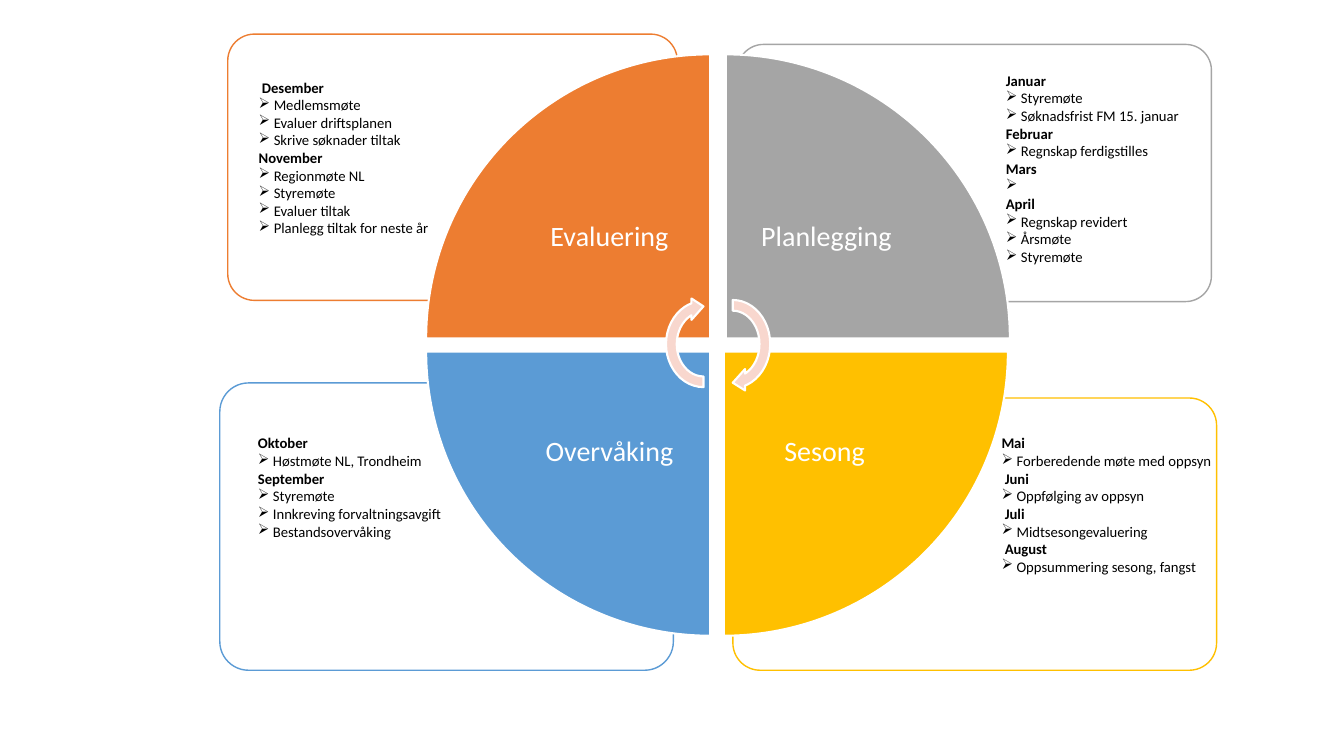
import pptx
import pptx.util
import pptx.dml.color
import pptx.enum.shapes
import pptx.enum.text
import pptx.oxml.ns
from dataclasses import dataclass
from lxml import etree

Cm = pptx.util.Cm
Pt = pptx.util.Pt
SHAPE = pptx.enum.shapes.MSO_SHAPE
qn = pptx.oxml.ns.qn


@dataclass(frozen=True)
class Theme:
    font: str = "Calibri"
    orange: str = "ED7D31"
    grey: str = "A5A5A5"
    yellow: str = "FFC000"
    blue: str = "5B9BD5"
    arrow: str = "F8D7CE"
    white: str = "FFFFFF"
    black: str = "000000"
    phase_size: float = 20
    task_size: float = 10.5
    card_line: float = 1
    wheel_line: float = 1.5


theme = Theme()

PHASES = [
    {"name": "Sesong", "color": theme.yellow, "rotation": 180,
     "wedge": (18.24, 8.86), "card": (18.47, 10.03, 12.19, 6.86),
     "calendar": (24.99, 10.82, 6.63, 5.05),
     "months": [("Mai", ["Forberedende møte med oppsyn"]),
                (" Juni", ["Oppfølging av oppsyn"]),
                (" Juli", ["Midtsesongevaluering"]),
                (" August", ["Oppsummering sesong, fangst"])]},
    {"name": "Overvåking", "color": theme.blue, "rotation": 270,
     "wedge": (10.74, 8.86), "card": (5.54, 9.65, 11.43, 7.24),
     "calendar": (6.25, 10.82, 6.27, 4.48),
     "months": [("Oktober", ["Høstmøte NL, Trondheim"]),
                ("September", ["Styremøte", "Innkreving forvaltningsavgift",
                               "Bestandsovervåking"])]},
    {"name": "Planlegging", "color": theme.grey, "rotation": 90,
     "wedge": (18.29, 1.37), "card": (18.59, 1.12, 11.94, 6.48),
     "calendar": (25.1, 1.68, 6.48, 5.97),
     "months": [("Januar", ["Styremøte", "Søknadsfrist FM 15. januar"]),
                ("Februar", ["Regnskap ferdigstilles"]),
                ("Mars", [" "]),
                ("April", ["Regnskap revidert", "Årsmøte", "Styremøte"])]},
    {"name": "Evaluering", "color": theme.orange, "rotation": 0,
     "wedge": (10.74, 1.37), "card": (5.74, 0.86, 11.33, 6.71),
     "calendar": (6.27, 1.85, 11.99, 4.29),
     "months": [(" Desember", ["Medlemsmøte", "Evaluer driftsplanen",
                               "Skrive søknader tiltak"]),
                ("November", ["Regionmøte NL", "Styremøte", "Evaluer tiltak",
                              "Planlegg tiltak for neste år"])]},
]
ARROWS = [((17.22, 7.59, 2.49, 2.16), 90), ((16.51, 7.59, 2.44, 2.16), 270)]

WEDGE_SIDE = 7.16
LABEL_SIDE = 5.08
LABEL_INSET = 0.41
TASK_INDENT = 0.38


def rgb(color):
    return pptx.dml.color.RGBColor.from_string(color)


def add_shape(slide, kind, box, fill, line, width, rotation=0):
    shape = slide.shapes.add_shape(kind, *map(Cm, box))
    shape.shadow.inherit = False
    shape.fill.solid()
    shape.fill.fore_color.rgb = rgb(fill)
    shape.line.color.rgb = rgb(line)
    shape.line.width = Pt(width)
    shape.rotation = rotation
    return shape


def add_run(paragraph, text, size, color, bold=False):
    run = paragraph.add_run()
    run.text = text
    run.font.name = theme.font
    run.font.size = Pt(size)
    run.font.bold = bold
    run.font.color.rgb = rgb(color)


def add_card(slide, phase):
    card = add_shape(slide, SHAPE.ROUNDED_RECTANGLE, phase["card"],
                     theme.white, phase["color"], theme.card_line)
    card.adjustments[0] = 0.1
    white = card.fill._xPr.find(".//" + qn("a:srgbClr"))
    etree.SubElement(white, qn("a:alpha"), val="90000")


def add_wedge(slide, phase):
    left, top = phase["wedge"]
    add_shape(slide, SHAPE.PIE_WEDGE, (left, top, WEDGE_SIDE, WEDGE_SIDE),
              phase["color"], theme.white, theme.wheel_line, phase["rotation"])
    inward = WEDGE_SIDE - LABEL_SIDE
    if phase["rotation"] in (0, 270):
        left += inward
    if phase["rotation"] in (0, 90):
        top += inward
    label = slide.shapes.add_textbox(Cm(left), Cm(top), Cm(LABEL_SIDE), Cm(LABEL_SIDE))
    frame = label.text_frame
    frame.word_wrap = True
    frame.vertical_anchor = pptx.enum.text.MSO_ANCHOR.MIDDLE
    frame.margin_left = frame.margin_right = Cm(LABEL_INSET)
    frame.margin_top = frame.margin_bottom = Cm(LABEL_INSET)
    paragraph = frame.paragraphs[0]
    paragraph.alignment = pptx.enum.text.PP_ALIGN.CENTER
    paragraph.line_spacing = 0.9
    add_run(paragraph, phase["name"], theme.phase_size, theme.white)


def add_calendar(slide, phase):
    frame = slide.shapes.add_textbox(*map(Cm, phase["calendar"])).text_frame
    frame.word_wrap = True
    lines = []
    for month, tasks in phase["months"]:
        lines.append((month, True))
        lines.extend((task, False) for task in tasks)
    for index, (text, is_month) in enumerate(lines):
        paragraph = frame.add_paragraph() if index else frame.paragraphs[0]
        if not is_month:
            properties = paragraph._p.get_or_add_pPr()
            properties.set("marL", str(Cm(TASK_INDENT)))
            properties.set("indent", str(-Cm(TASK_INDENT)))
            etree.SubElement(properties, qn("a:buChar"), char="➢")
        add_run(paragraph, text, theme.task_size, theme.black, is_month)


def main():
    deck = pptx.Presentation()
    deck.slide_width, deck.slide_height = Cm(33.87), Cm(19.05)
    slide = deck.slides.add_slide(deck.slide_layouts[6])
    for phase in PHASES:
        add_card(slide, phase)
    for phase in PHASES:
        add_wedge(slide, phase)
    for box, rotation in ARROWS:
        add_shape(slide, SHAPE.CIRCULAR_ARROW, box, theme.arrow,
                  theme.white, theme.wheel_line, rotation)
    for phase in PHASES:
        add_calendar(slide, phase)
    deck.save("out.pptx")


if __name__ == "__main__":
    main()
